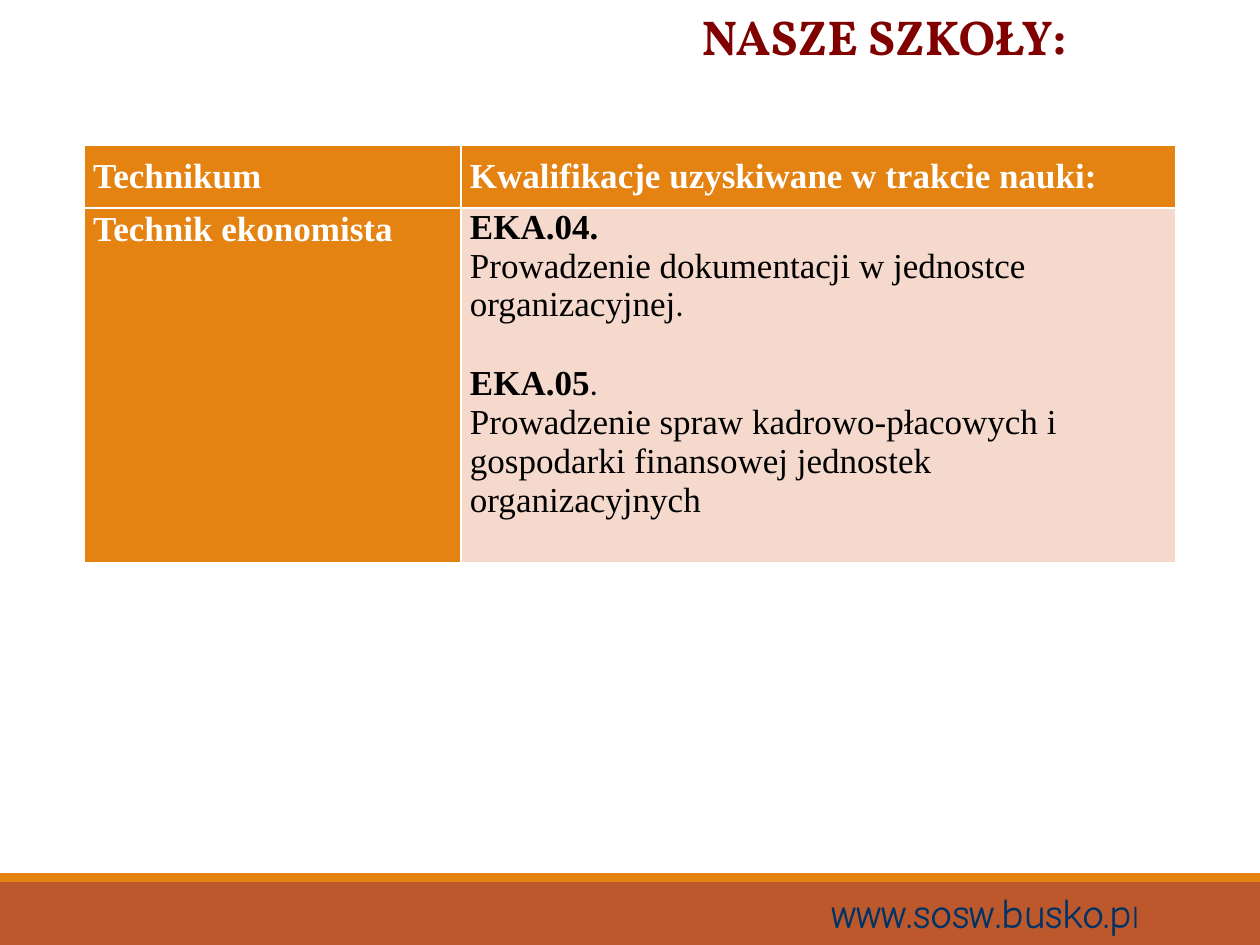
from pptx import Presentation
from pptx.dml.color import RGBColor
from pptx.enum.shapes import MSO_SHAPE
from pptx.enum.text import MSO_ANCHOR, MSO_AUTO_SIZE, PP_ALIGN
from pptx.util import Inches, Pt

COLORS = {"orange": "E48312", "rust": "BD582C", "pink": "F5D9CC", "navy": "003366",
          "maroon": "800000", "white": "FFFFFF", "black": "000000"}
SERIF = "Times New Roman"


def rgb(name):
    return RGBColor.from_string(COLORS[name])


def add_run(p, text, size, font, color, bold=False):
    r = p.add_run()
    r.text = text
    for name, value in {"size": Pt(size), "name": font, "bold": bold}.items():
        setattr(r.font, name, value)
    r.font.color.rgb = rgb(color)


prs = Presentation()
prs.slide_width, prs.slide_height = Inches(10), Inches(7.5)
s = prs.slides.add_slide(prs.slide_layouts[5])

for top, height, color in [(7, 0.5, "rust"), (6.93, 0.07, "orange")]:
    bar = s.shapes.add_shape(MSO_SHAPE.RECTANGLE, 0, Inches(top), Inches(10), Inches(height))
    bar.shadow.inherit = False
    bar.fill.solid()
    bar.fill.fore_color.rgb = rgb(color)
    bar.line.fill.background()

website = s.shapes.add_textbox(Inches(6.5), Inches(6.99), Inches(3.02), Inches(0.51))
website.text_frame.word_wrap = False
p = website.text_frame.paragraphs[0]
add_run(p, "www.sosw.busko.p", 24, "Comic Neue", "navy")
add_run(p, "l", 18, "Comic Neue", "navy")

title = s.shapes.title
box = {"left": 5.47, "top": 0, "width": 3.23, "height": 0.64}
for name, value in box.items():
    setattr(title, name, Inches(value))
tf = title.text_frame
for name, value in {"word_wrap": True, "auto_size": MSO_AUTO_SIZE.NONE,
                    "vertical_anchor": MSO_ANCHOR.TOP}.items():
    setattr(tf, name, value)
p = tf.paragraphs[0]
p.alignment = PP_ALIGN.LEFT
add_run(p, "NASZE SZKOŁY:", 28, "Vollkorn", "maroon", True)

table = s.shapes.add_table(2, 2, Inches(0.67), Inches(1.15), Inches(8.66), Inches(3.32)).table
table.horz_banding = False
for column, width in zip(table.columns, [2.99, 5.67]):
    column.width = Inches(width)
for row, height in zip(table.rows, [0.5, 2.82]):
    row.height = Inches(height)

margins = {"margin_left": 0.07, "margin_right": 0.07, "margin_top": 0, "margin_bottom": 0}
for i, row in enumerate(table.rows):
    for j, cell in enumerate(row.cells):
        for name, value in margins.items():
            setattr(cell, name, Inches(value))
        cell.vertical_anchor = MSO_ANCHOR.TOP if i else MSO_ANCHOR.MIDDLE
        cell.fill.solid()
        cell.fill.fore_color.rgb = rgb("pink" if i and j else "orange")

labels = {(0, 0): "Technikum", (0, 1): "Kwalifikacje uzyskiwane w trakcie nauki:",
          (1, 0): "Technik ekonomista"}
for (i, j), text in labels.items():
    add_run(table.cell(i, j).text_frame.paragraphs[0], text, 20, SERIF, "white", True)
table.cell(1, 0).text_frame.paragraphs[0].line_spacing = 1.07

qualifications = [
    [("EKA.04.", 20, SERIF, True)],
    [("Prowadzenie dokumentacji w jednostce organizacyjnej", 20, SERIF, False),
     (".", 18, "Calibri", False)],
    [("EKA.05", 20, SERIF, True), (".", 18, "Calibri", False)],
    [("Prowadzenie spraw kadrowo-płacowych i gospodarki finansowej jednostek organizacyjnych",
      20, SERIF, False)],
]
tf = table.cell(1, 1).text_frame
for i, runs in enumerate(qualifications):
    p = tf.add_paragraph() if i else tf.paragraphs[0]
    if i == 2:
        p.space_before = Pt(22)
    for text, size, font, bold in runs:
        add_run(p, text, size, font, "black", bold)

prs.save("out.pptx")
